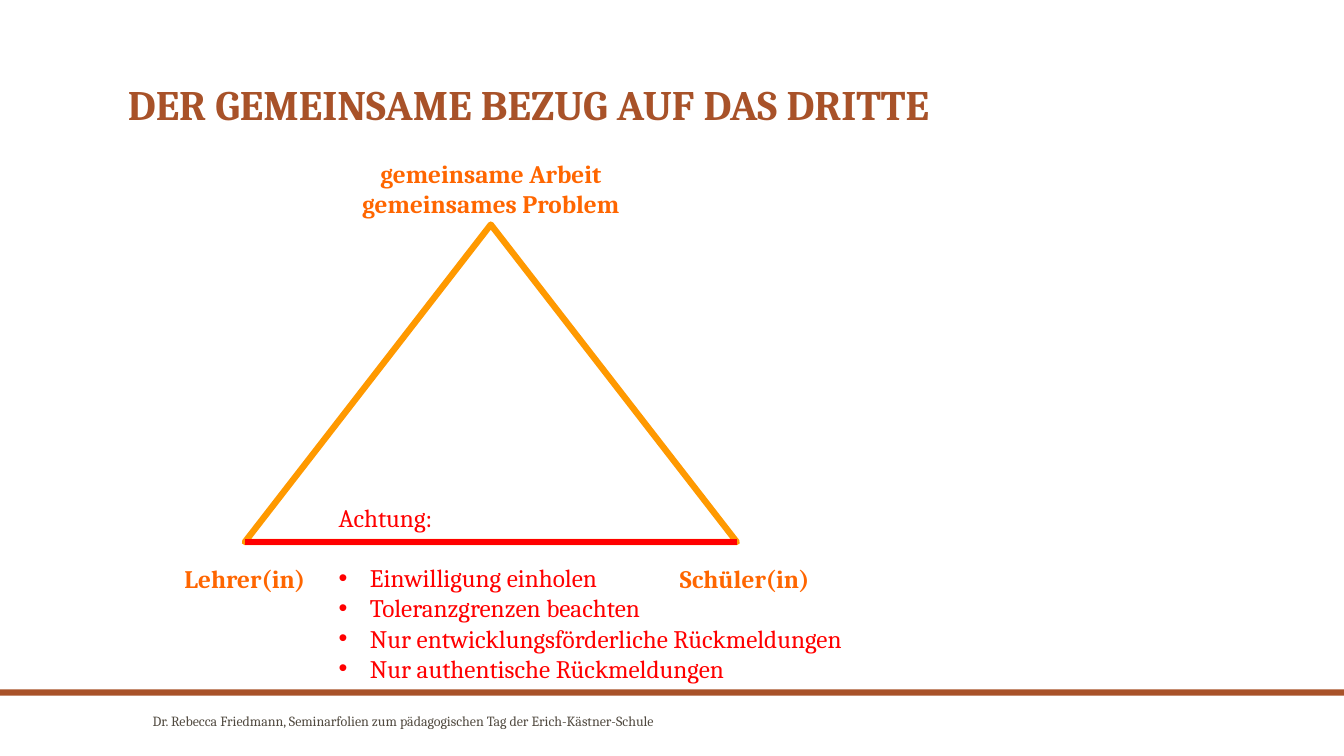
import pptx
import pptx.util
import pptx.dml.color
import pptx.enum.shapes
import pptx.enum.text
import pptx.oxml.ns
import lxml.etree

Cm, Pt = pptx.util.Cm, pptx.util.Pt
Shape = pptx.enum.shapes.MSO_SHAPE
Anchor = pptx.enum.text.MSO_ANCHOR
Align = pptx.enum.text.PP_ALIGN
FONT = "Cambria"
BROWN, ORANGE, AMBER, RED, GREY = "A85229", "FF6600", "FF9900", "FF0000", "514A40"
WIDE, HIGH = 33.87, 19.05


def color(code):
    return pptx.dml.color.RGBColor.from_string(code)


def add_xml(parent, tag, **attrs):
    return lxml.etree.SubElement(parent, pptx.oxml.ns.qn(tag), attrs)


def place(shape, left, top, width, height):
    shape.left, shape.top = Cm(left), Cm(top)
    shape.width, shape.height = Cm(width), Cm(height)


def set_frame(shape, anchor):
    frame = shape.text_frame
    frame.word_wrap = True
    frame.auto_size = pptx.enum.text.MSO_AUTO_SIZE.NONE
    frame.vertical_anchor = anchor
    return frame


def add_run(para, text, size, code, bold=False):
    run = para.add_run()
    run.text = text
    font = run.font
    font.name, font.size, font.bold = FONT, Pt(size), bold
    font.color.rgb = color(code)


def add_text(slide, box, lines, size, code, bold=False,
             align=Align.LEFT, anchor=Anchor.TOP):
    shape = slide.shapes.add_textbox(*map(Cm, box))
    frame = set_frame(shape, anchor)
    for i, line in enumerate(lines):
        para = frame.add_paragraph() if i else frame.paragraphs[0]
        para.alignment = align
        add_run(para, line, size, code, bold)


def add_title(slide, box):
    title = slide.shapes.title
    place(title, *box)
    para = set_frame(title, Anchor.BOTTOM).paragraphs[0]
    para.alignment = Align.LEFT
    para.line_spacing = 0.9
    add_run(para, "DER GEMEINSAME BEZUG AUF DAS DRITTE", 30, BROWN, True)


def add_list(slide, box):
    """Fill the body with the warning and its bullets below the base line."""
    body = slide.placeholders[1]
    place(body, *box)
    frame = set_frame(body, Anchor.TOP)
    lines = ["Achtung:", "Einwilligung einholen", "Toleranzgrenzen beachten",
             "Nur entwicklungsförderliche Rückmeldungen",
             "Nur authentische Rückmeldungen"]
    indent = Cm(0.79)
    for i, line in enumerate(lines):
        para = frame.add_paragraph() if i else frame.paragraphs[0]
        props = para._p.get_or_add_pPr()
        props.set("marL", str(indent if i else 0))
        props.set("indent", str(-indent if i else 0))
        if i:
            add_xml(props, "a:buFont", typeface="Arial")
            add_xml(props, "a:buChar", char="•")
        else:
            add_xml(props, "a:buNone")
        para.space_before = Pt(21.6 if i == 1 else 0)
        add_run(para, line, 18, RED)


def add_model(slide, left, top, width, height):
    """Draw the triangle with its red base and a label at each corner."""
    shapes = slide.shapes
    tri = shapes.add_shape(Shape.ISOSCELES_TRIANGLE,
                           *map(Cm, (left, top, width, height)))
    tri.shadow.inherit = False
    tri.fill.background()
    tri.line.color.rgb = color(AMBER)
    tri.line.width = Pt(4.5)

    right, base = left + width, top + height
    line = shapes.add_connector(pptx.enum.shapes.MSO_CONNECTOR.STRAIGHT,
                                Cm(left), Cm(base), Cm(right), Cm(base))
    line.line.color.rgb = color(RED)
    line.line.width = Pt(4.5)
    add_xml(line._element.spPr, "a:effectLst")

    span, low = 8, base + 0.41
    labels = [(left, low, 1.02, ["Lehrer(in)"]),
              (right + 0.2, low, 1.02, ["Schüler(in)"]),
              (left + width / 2, top - 1.8, 1.8,
               ["gemeinsame Arbeit", "gemeinsames Problem"])]
    for mid, y, tall, lines in labels:
        add_text(slide, (mid - span / 2, y, span, tall), lines, 18, ORANGE,
                 True, Align.CENTER)


def add_footer(slide, left, top, width, height):
    bar = slide.shapes.add_shape(Shape.RECTANGLE,
                                 *map(Cm, (left, top, width, 0.16)))
    bar.shadow.inherit = False
    bar.fill.solid()
    bar.fill.fore_color.rgb = color(BROWN)
    bar.line.fill.background()
    add_text(slide, (left + 3.6, top + 0.46, 14.4, height - 1.02),
             ["Dr. Rebecca Friedmann, Seminarfolien zum pädagogischen Tag "
              "der Erich-Kästner-Schule"], 10, GREY, anchor=Anchor.MIDDLE)


def main():
    deck = pptx.Presentation()
    deck.slide_width, deck.slide_height = Cm(WIDE), Cm(HIGH)
    slide = deck.slides.add_slide(deck.slide_layouts[1])
    add_title(slide, (2.97, 1.4, 23.2, 2))
    add_list(slide, (8.28, 12.52, 16.18, 4.88))
    add_model(slide, 6.17, 5.66, 12.4, 8)
    add_footer(slide, 0, 17.37, WIDE, HIGH - 17.37)
    deck.save("out.pptx")


if __name__ == "__main__":
    main()
